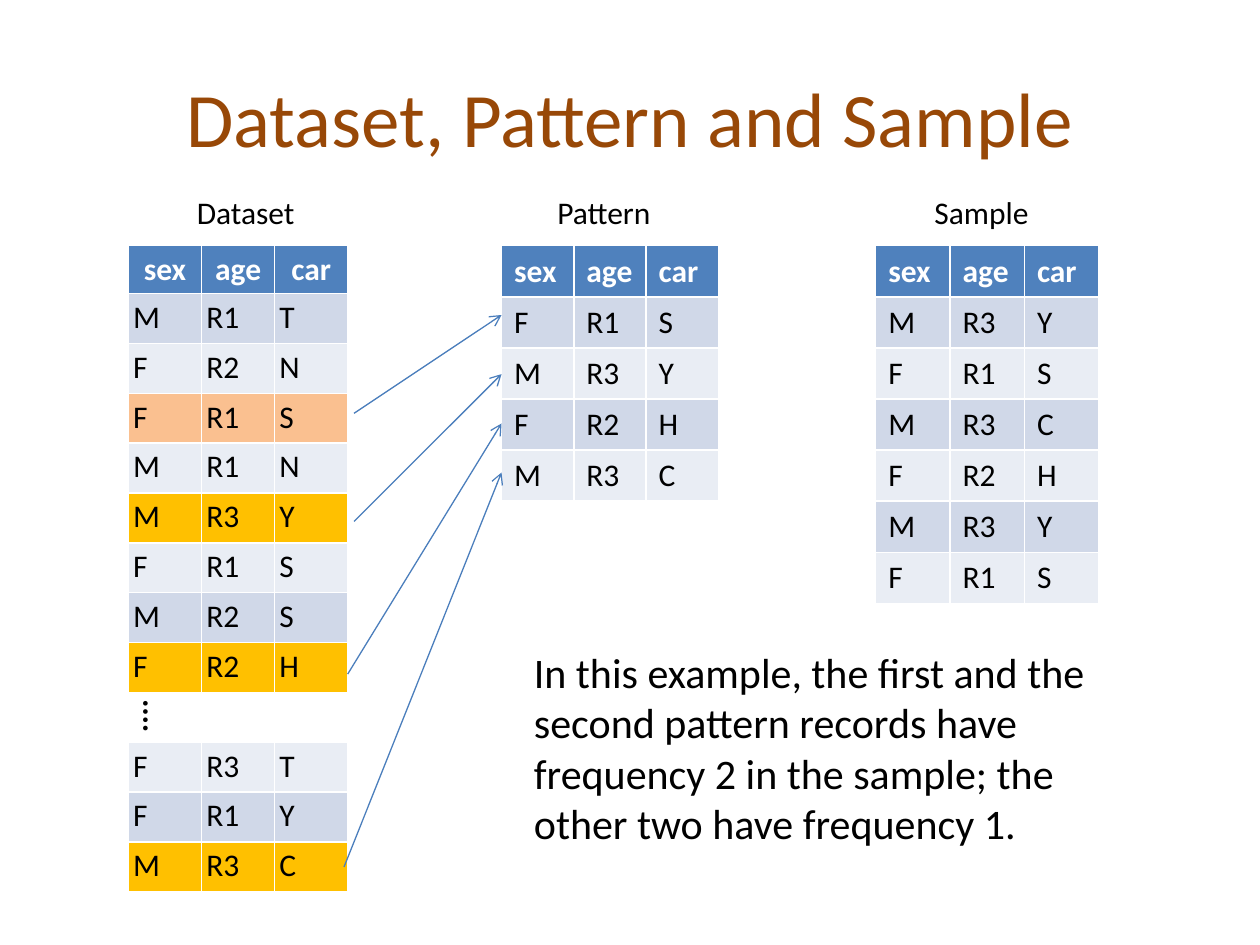
from lxml import etree
from pptx import Presentation, util as u
from pptx.dml.color import RGBColor
from pptx.enum import shapes, text
from pptx.oxml import ns

BLACK = RGBColor(0x00, 0x00, 0x00)
WHITE = RGBColor(0xFF, 0xFF, 0xFF)
BROWN = RGBColor(0x98, 0x48, 0x07)
HEADER = RGBColor(0x4F, 0x81, 0xBD)
BANDS = (RGBColor(0xD0, 0xD8, 0xE8), RGBColor(0xE9, 0xED, 0xF4))
ORANGE = RGBColor(0xFA, 0xC0, 0x90)
AMBER = RGBColor(0xFF, 0xC0, 0x00)
ARROW = RGBColor(0x4B, 0x7E, 0xBC)

COLUMNS = "sex age car"
DATASET = ["M R1 T", "F R2 N", "F R1 S", "M R1 N", "M R3 Y", "F R1 S",
           "M R2 S", "F R2 H", "", "F R3 T", "F R1 Y", "M R3 C"]
PATTERN = ["F R1 S", "M R3 Y", "F R2 H", "M R3 C"]
SAMPLE = ["M R3 Y", "F R1 S", "M R3 C", "F R2 H", "M R3 Y", "F R1 S"]
MATCHES = {2: ORANGE, 4: AMBER, 7: AMBER, 11: AMBER}
TABLE_TOP = 140.4
PATTERN_LEFT = 286.6


class SlideBuilder:
    font = "Calibri"
    size = 18

    def __init__(self, page):
        self.page = page

    def format(self, para, size=None, color=BLACK, bold=False):
        for span in para.runs:
            span.font.name = self.font
            span.font.size = u.Pt(size or self.size)
            span.font.color.rgb = color
            span.font.bold = bold

    def title(self, words, left, top, width, height):
        box = self.page.shapes.title
        box.left, box.top, box.width, box.height = map(u.Pt, (left, top, width, height))
        box.text_frame.text = words
        para = box.text_frame.paragraphs[0]
        para.alignment = text.PP_ALIGN.CENTER
        self.format(para, 44, BROWN)

    def text_box(self, words, left, top, width, height, tabs=(), **style):
        box = self.page.shapes.add_textbox(*map(u.Pt, (left, top, width, height)))
        box.text_frame.word_wrap = True
        box.text_frame.text = words
        para = box.text_frame.paragraphs[0]
        self.format(para, **style)
        if tabs:
            stops = etree.SubElement(para._p.get_or_add_pPr(), ns.qn("a:tabLst"))
            for position in tabs:
                etree.SubElement(stops, ns.qn("a:tab"), pos=str(u.Pt(position)), algn="l")

    def table(self, records, left, column_width, row_height=29.2, header_height=29.2,
              margin=None, header_align=None, highlights=None):
        """Draw a banded table; an empty record becomes an unfilled gap row."""
        highlights = highlights or {}
        rows = len(records) + 1
        height = header_height + row_height * len(records)
        grid = self.page.shapes.add_table(
            rows, 3, u.Pt(left), u.Pt(TABLE_TOP), u.Pt(3 * column_width), u.Pt(height)).table
        for column in grid.columns:
            column.width = u.Pt(column_width)
        for index, record in enumerate([COLUMNS] + records):
            is_header = index == 0
            grid.rows[index].height = u.Pt(header_height if is_header else row_height)
            fill = HEADER if is_header else highlights.get(index - 1, BANDS[(index - 1) % 2])
            values = record.split() or [""] * 3
            for cell, value in zip(grid.rows[index].cells, values):
                if margin is not None:
                    cell.margin_left = cell.margin_right = u.Pt(margin)
                    cell.margin_top = cell.margin_bottom = u.Pt(margin)
                if not value:
                    cell.fill.background()
                    continue
                cell.fill.solid()
                cell.fill.fore_color.rgb = fill
                cell.text_frame.text = value
                para = cell.text_frame.paragraphs[0]
                if is_header:
                    para.alignment = header_align
                self.format(para, color=WHITE if is_header else BLACK, bold=is_header)

    def arrow(self, start, end):
        line = self.page.shapes.add_connector(
            shapes.MSO_CONNECTOR.STRAIGHT, *map(u.Pt, (*start, *end)))
        line.line.color.rgb = ARROW
        line.line.width = u.Pt(0.75)
        etree.SubElement(line.line._get_or_add_ln(), ns.qn("a:tailEnd"), type="arrow")
        etree.SubElement(line._element.spPr, ns.qn("a:effectLst"))


def main():
    deck = Presentation()
    deck.slide_width, deck.slide_height = u.Pt(720), u.Pt(540)
    slide = SlideBuilder(deck.slides.add_slide(deck.slide_layouts[5]))

    slide.title("Dataset, Pattern and Sample", 36, 21.6, 648, 90)
    slide.table(DATASET, 73.4, 41.8, row_height=28.5, header_height=27, margin=2.7,
                header_align=text.PP_ALIGN.CENTER, highlights=MATCHES)
    slide.table(PATTERN, PATTERN_LEFT, 41.3)
    slide.table(SAMPLE, 500.4, 42.5)
    slide.text_box("\tDataset\tPattern\tSample", 73.4, 106.6, 551.5, 29, tabs=(32, 238, 453.5))

    for start, end_top in (((202.3, 236.2), 180), ((202.3, 298), 213.8),
                           ((198.7, 385.2), 242), ((196.6, 495.4), 270)):
        slide.arrow(start, (PATTERN_LEFT, end_top))

    slide.text_box("⁞", 73.4, 393, 45.4, 29, bold=True)
    slide.text_box("In this example, the first and the second pattern records have "
                   "frequency 2 in the sample; the other two have frequency 1.",
                   298, 365.8, 332, 124, size=24)
    deck.save("out.pptx")


if __name__ == "__main__":
    main()
